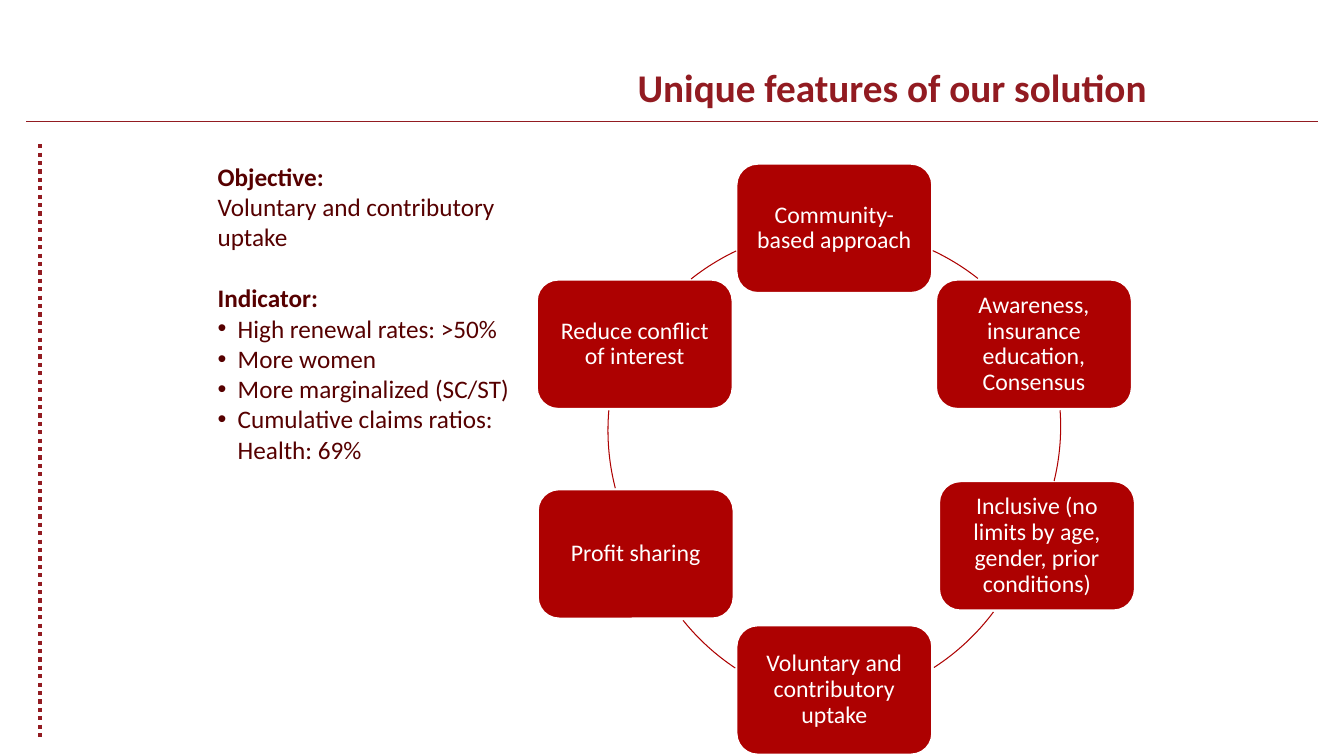
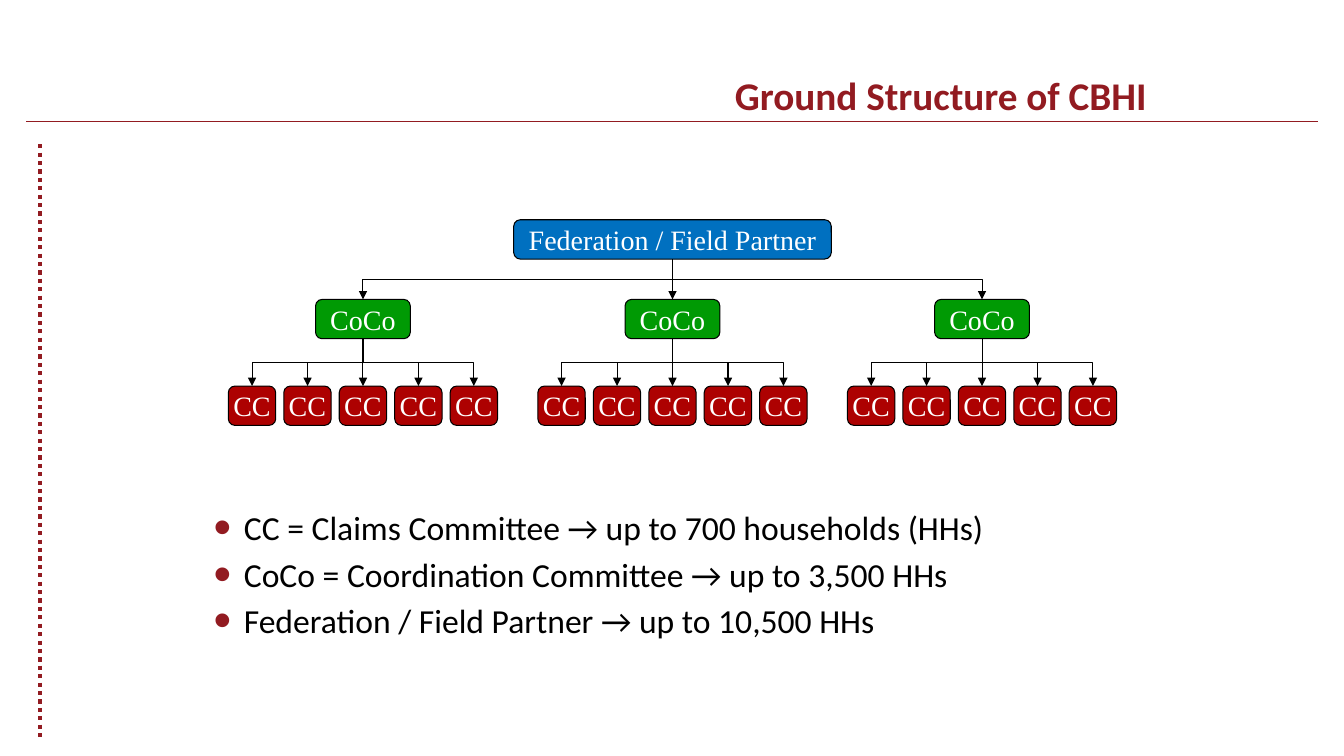
"""Build two slides on community-based health insurance."""
import pptx
import pptx.dml.color
import pptx.enum.dml
import pptx.enum.shapes
import pptx.enum.text
import pptx.oxml
import pptx.oxml.ns
import pptx.util

Inches = pptx.util.Inches
Pt = pptx.util.Pt
SHAPE = pptx.enum.shapes.MSO_SHAPE
CONNECTOR = pptx.enum.shapes.MSO_CONNECTOR
ALIGN = pptx.enum.text.PP_ALIGN
ANCHOR = pptx.enum.text.MSO_ANCHOR
qn = pptx.oxml.ns.qn

COLORS = {
    "brand": "921B21",
    "red": "AD0101",
    "maroon": "560000",
    "green": "009A04",
    "blue": "0070C0",
    "black": "000000",
    "white": "FFFFFF",
}
BODY_FONT = "Calibri"
CHART_FONT = "Times New Roman"


def rgb(name):
    """Return the named colour of the palette."""
    return pptx.dml.color.RGBColor.from_string(COLORS[name])


def add_xml(parent, tag, **attributes):
    """Append a DrawingML element with the given attributes."""
    element = pptx.oxml.parse_xml(f"<{tag} {pptx.oxml.ns.nsdecls('a')}/>")
    for key, value in attributes.items():
        element.set(key, str(value))
    parent.append(element)


def write(frame, text, size=18, color="black", font=BODY_FONT, bold=False,
          align=ALIGN.LEFT, line_spacing=None, before=0, indent=0,
          bullet_color=None, bullet_size=100):
    """Write one formatted paragraph, reusing the first one if it is empty."""
    paragraph = frame.paragraphs[0]
    if paragraph.runs:
        paragraph = frame.add_paragraph()
        paragraph.space_before = Pt(before)
    if indent:
        properties = paragraph._p.get_or_add_pPr()
        properties.set("marL", str(Inches(indent)))
        properties.set("indent", str(-Inches(indent)))
        if bullet_color:
            add_xml(properties, "a:buClr")
            add_xml(properties[-1], "a:srgbClr", val=COLORS[bullet_color])
        add_xml(properties, "a:buSzPct", val=bullet_size * 1000)
        add_xml(properties, "a:buFont", typeface="Arial")
        add_xml(properties, "a:buChar", char="•")
    paragraph.alignment = align
    if line_spacing:
        paragraph.line_spacing = line_spacing
    run = paragraph.add_run()
    run.text = text
    run.font.size = Pt(size)
    run.font.name = font
    run.font.bold = bold
    run.font.color.rgb = rgb(color)


class Deck:
    """Hold the shared style and the slide being built."""

    def __init__(self):
        """Start an empty widescreen presentation."""
        self.presentation = pptx.Presentation()
        self.presentation.slide_width = Inches(13.33)
        self.presentation.slide_height = Inches(7.5)
        self.slide = None

    def new_slide(self, title, top):
        """Add a slide with its title and the two brand rules."""
        self.slide = self.presentation.slides.add_slide(
            self.presentation.slide_layouts[5])
        self.line((0.26, 1.21), (13.07, 1.21), "brand")
        margin_rule = self.line((0.4, 1.43), (0.4, 7.34), "brand", 3)
        margin_rule.line.dash_style = pptx.enum.dml.MSO_LINE.ROUND_DOT
        heading = self.slide.shapes.title
        heading.left, heading.top = Inches(4.07), Inches(top)
        heading.width, heading.height = Inches(7.4), Inches(0.94)
        heading.text_frame.vertical_anchor = ANCHOR.BOTTOM
        write(heading.text_frame, title, size=28, color="brand", bold=True,
              align=ALIGN.RIGHT)

    def style_line(self, connector, color, width):
        """Give a connector its colour and width, without a shadow."""
        connector.line.color.rgb = rgb(color)
        connector.line.width = Pt(width)
        add_xml(connector._element.spPr, "a:effectLst")

    def line(self, start, end, color, width=0.75):
        """Draw a straight rule."""
        rule = self.slide.shapes.add_connector(
            CONNECTOR.STRAIGHT, *map(Inches, start + end))
        self.style_line(rule, color, width)
        return rule

    def arrow(self, parent, child):
        """Join a parent box to a child box below it with an arrow."""
        start_x, start_y = parent.left + parent.width // 2, parent.top + parent.height
        end_x, end_y = child.left + child.width // 2, child.top
        across, down = end_x - start_x, end_y - start_y
        straight = abs(across) < Inches(0.01)
        kind = CONNECTOR.STRAIGHT if straight else CONNECTOR.ELBOW
        link = self.slide.shapes.add_connector(kind, start_x, start_y, end_x, end_y)
        link.begin_connect(parent, 2)
        link.end_connect(child, 0)
        if not straight:
            link.left = (start_x + end_x - down) // 2
            link.top = (start_y + end_y - abs(across)) // 2
            link.width, link.height = down, abs(across)
            frame = link._element.spPr.find(qn("a:xfrm"))
            frame.set("rot", "16200000" if across > 0 else "5400000")
            frame.set("flipH", "1" if across > 0 else "0")
        self.style_line(link, "black", 0.75)
        outline = link._element.spPr.find(qn("a:ln"))
        add_xml(outline, "a:tailEnd", type="triangle")

    def box(self, text, left, top, width, height, fill, outline="black",
            outline_width=0.75, inset=0, **text_format):
        """Draw a rounded box with centred white text."""
        shape = self.slide.shapes.add_shape(
            SHAPE.ROUNDED_RECTANGLE, *map(Inches, (left, top, width, height)))
        shape.shadow.inherit = False
        shape.fill.solid()
        shape.fill.fore_color.rgb = rgb(fill)
        shape.line.color.rgb = rgb(outline)
        shape.line.width = Pt(outline_width)
        frame = shape.text_frame
        frame.word_wrap = True
        frame.vertical_anchor = ANCHOR.MIDDLE
        frame.margin_left = frame.margin_right = Inches(inset)
        write(frame, text, color="white", align=ALIGN.CENTER, **text_format)
        return shape

    def arc(self, left, top, diameter, start, end):
        """Draw part of a circle between two clockwise angles in degrees."""
        shape = self.slide.shapes.add_shape(
            SHAPE.ARC, *map(Inches, (left, top, diameter, diameter)))
        shape.shadow.inherit = False
        shape.fill.background()
        shape.line.color.rgb = rgb("red")
        shape.line.width = Pt(0.75)
        for index, angle in enumerate((start, end)):
            shape.adjustments[index] = angle * 0.6

    def text_box(self, left, top, width, height):
        """Add a wrapping text box and return its frame."""
        box = self.slide.shapes.add_textbox(
            *map(Inches, (left, top, width, height)))
        box.text_frame.word_wrap = True
        return box.text_frame


def build_features(deck):
    """Build the ring of features with the objective beside it."""
    deck.new_slide("Unique features of our solution", 0.21)
    features = [
        ("Community-based approach", 7.3, 1.62),
        ("Awareness, insurance education, Consensus", 9.28, 2.77),
        ("Inclusive (no limits by age, gender, prior conditions)", 9.31, 4.77),
        ("Voluntary and contributory uptake", 7.3, 6.2),
        ("Profit sharing", 5.33, 4.85),
        ("Reduce conflict of interest", 5.32, 2.77),
    ]
    ring_arcs = [
        (5.99, 2.27, 295.1, 308.3),
        (5.94, 1.94, 356, 13.7),
        (5.73, 2.41, 36.8, 57.1),
        (6.27, 2.43, 123.6, 141.2),
        (6.03, 1.98, 165.5, 185),
        (5.99, 2.27, 231.5, 244.7),
    ]
    for feature, left, top in features:
        deck.box(feature, left, top, 1.95, 1.29, "red", "white", 2,
                 inset=0.13, size=17, line_spacing=0.9)
    for left, top, start, end in ring_arcs:
        deck.arc(left, top, 4.58, start, end)

    goals = deck.text_box(2.06, 1.55, 3.16, 3.13)
    write(goals, "Objective:", color="maroon", bold=True)
    write(goals, "Voluntary and contributory uptake", color="maroon")
    write(goals, "Indicator:", color="maroon", bold=True, before=22)
    for indicator in ("High renewal rates: >50%", "More women",
                      "More marginalized (SC/ST)",
                      "Cumulative claims ratios: Health: 69%"):
        write(goals, indicator, color="maroon", indent=0.2)


def build_structure(deck):
    """Build the three-level organisation chart and its legend."""
    deck.new_slide("Ground Structure of CBHI", 0.28)
    center, branch_gap, claims_gap = 6.67, 3.07, 0.55

    def unit(text, middle, top, width, fill):
        """Draw one unit of the chart around its middle."""
        return deck.box(text, middle - width / 2, top, width, 0.39, fill,
                        size=20, font=CHART_FONT)

    federation = unit("Federation / Field Partner", center, 2.18, 3.15, "blue")
    for branch in (-1, 0, 1):
        branch_middle = center + branch * branch_gap
        coordination = unit("CoCo", branch_middle, 2.97, 0.94, "green")
        deck.arrow(federation, coordination)
        for position in range(-2, 3):
            claims = unit("CC", branch_middle + position * claims_gap,
                          3.83, 0.47, "red")
            deck.arrow(coordination, claims)

    legend = deck.text_box(2.02, 4.98, 9.45, 1.53)
    for entry in ("CC = Claims Committee → up to 700 households (HHs)",
                  "CoCo = Coordination Committee → up to 3,500 HHs",
                  "Federation / Field Partner → up to 10,500 HHs"):
        write(legend, entry, size=24, before=4.5, indent=0.3,
              bullet_color="brand", bullet_size=150)


def main():
    """Build and save the presentation."""
    deck = Deck()
    build_features(deck)
    build_structure(deck)
    deck.presentation.save("out.pptx")


if __name__ == "__main__":
    main()
